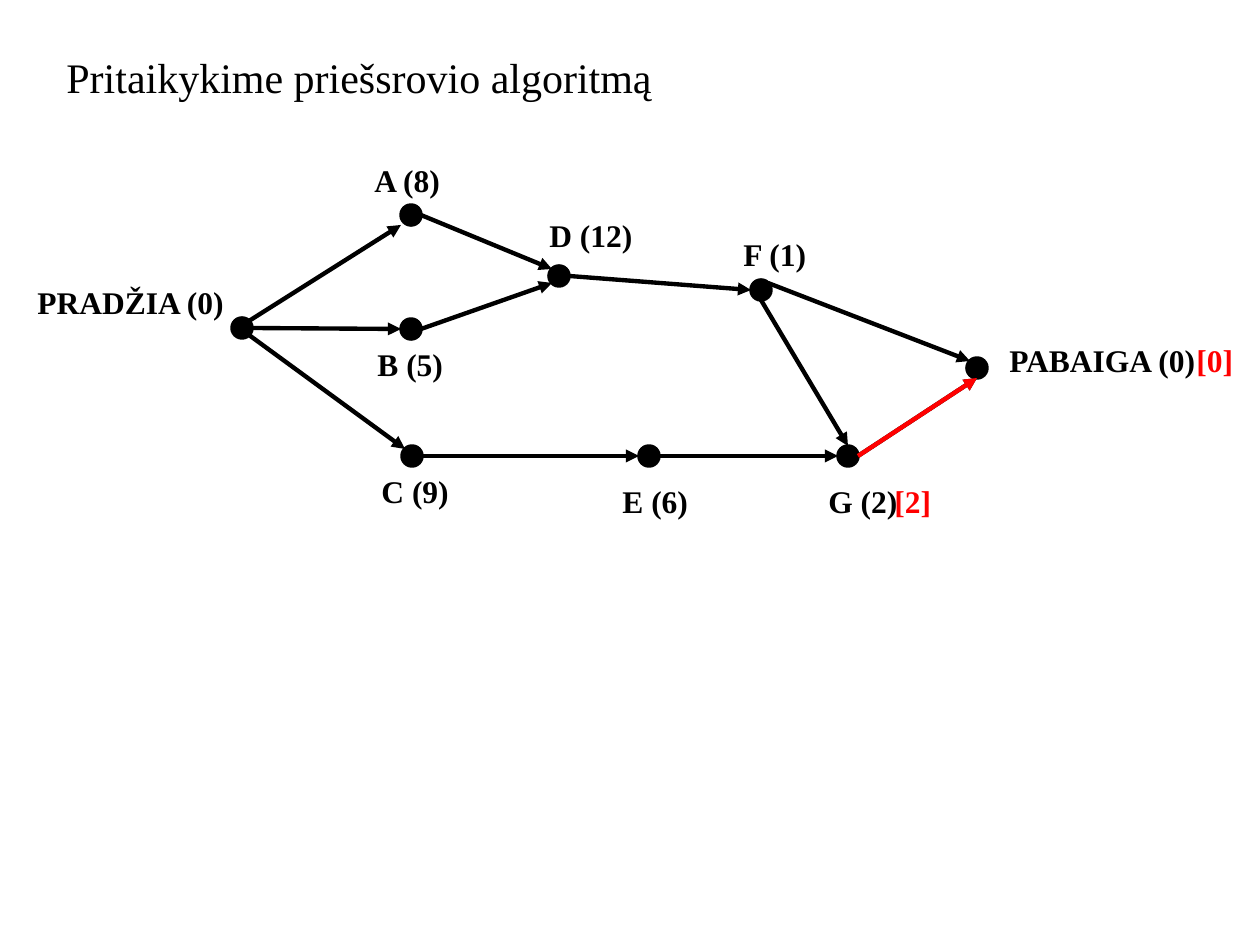
from pptx import Presentation
from pptx.dml.color import RGBColor as RGB
from pptx.enum.shapes import MSO_CONNECTOR as LINE, MSO_SHAPE as SHAPE
from pptx.enum.text import MSO_AUTO_SIZE as FIT
from pptx.util import Emu, Pt
from lxml import etree

PX = 914400 / 126
COLORS = {"black": "000000", "red": "FF0000"}
DRAWING = "{http://schemas.openxmlformats.org/drawingml/2006/main}"
RADIUS, LABEL_HEIGHT = 10, 50


def px(*lengths):
    return [Emu(round(length * PX)) for length in lengths]


def add_text(text, box, size=18, bold=True, color="black"):
    frame = slide.shapes.add_textbox(*px(*box)).text_frame
    for name, value in {"word_wrap": True, "auto_size": FIT.SHAPE_TO_FIT_TEXT}.items():
        setattr(frame, name, value)
    run = frame.paragraphs[0].add_run()
    run.text = text
    style = {"name": "Times New Roman", "size": Pt(size), "bold": bold}
    for name, value in style.items():
        setattr(run.font, name, value)
    run.font.color.rgb = RGB.from_string(COLORS[color])


deck = Presentation()
deck.slide_width, deck.slide_height = px(1260, 945)
slide = deck.slides.add_slide(deck.slide_layouts[6])

# Title
add_text("Pritaikykime priešsrovio algoritmą", (54, 45, 1131, 63), size=24, bold=False)

# Activities: centre of each node
nodes = {
    "start": (242, 328), "A": (411, 215), "B": (411, 329), "C": (412, 456),
    "D": (559, 276), "E": (649, 456), "G": (848, 456), "F": (761, 290),
    "end": (977, 368),
}
for x, y in nodes.values():
    node = slide.shapes.add_shape(
        SHAPE.OVAL, *px(x - RADIUS, y - RADIUS, 2 * RADIUS, 2 * RADIUS))
    node.shadow.inherit = False
    node.fill.solid()
    for paint in (node.fill.fore_color, node.line.color):
        paint.rgb = RGB.from_string(COLORS["black"])
    node.line.width = Pt(2)

# Dependencies: arrows between points on the node rims
rim = {
    "left": (-10, 0), "right": (10, 0), "bottom": (0, 10), "top": (0, -10),
    "upper left": (-7, -7), "upper right": (7, -7),
    "lower left": (-7, 7), "lower right": (7, 7), "corner": (-10, 10),
}
arrows = [
    ("start", "upper right", "A", "corner", "black"),
    ("start", "lower right", "C", "upper left", "black"),
    ("start", "right", "B", "left", "black"),
    ("A", "right", "D", "upper left", "black"),
    ("B", "right", "D", "lower left", "black"),
    ("C", "right", "E", "left", "black"),
    ("D", "right", "F", "left", "black"),
    ("E", "right", "G", "left", "black"),
    ("F", "bottom", "G", "top", "black"),
    ("F", "upper right", "end", "upper left", "black"),
    ("G", "right", "end", "bottom", "black"),
    ("G", "right", "end", "bottom", "red"),
]
for source, leave, target, arrive, color in arrows:
    ends = [position + shift
            for node, side in ((source, leave), (target, arrive))
            for position, shift in zip(nodes[node], rim[side])]
    arrow = slide.shapes.add_connector(LINE.STRAIGHT, *px(*ends))
    arrow.line.width = Pt(2.5)
    arrow.line.color.rgb = RGB.from_string(COLORS[color])
    etree.SubElement(arrow.line._get_or_add_ln(), DRAWING + "tailEnd", type="triangle")
    etree.SubElement(arrow._element.spPr, DRAWING + "effectLst")

# Activity names with durations, then the backward-pass values
labels = [
    ("PABAIGA (0)", 997, 335, 247, "black"),
    ("PRADŽIA (0)", 25, 277, 247, "black"),
    ("A (8)", 362, 155, 146, "black"),
    ("B (5)", 365, 339, 146, "black"),
    ("C (9)", 369, 466, 146, "black"),
    ("D (12)", 537, 210, 146, "black"),
    ("E (6)", 610, 476, 146, "black"),
    ("F (1)", 731, 229, 146, "black"),
    ("G (2)", 816, 476, 146, "black"),
    ("[0]", 1184, 335, 68, "red"),
    ("[2]", 882, 476, 68, "red"),
]
for text, x, y, width, color in labels:
    add_text(text, (x, y, width, LABEL_HEIGHT), color=color)

deck.save("out.pptx")
